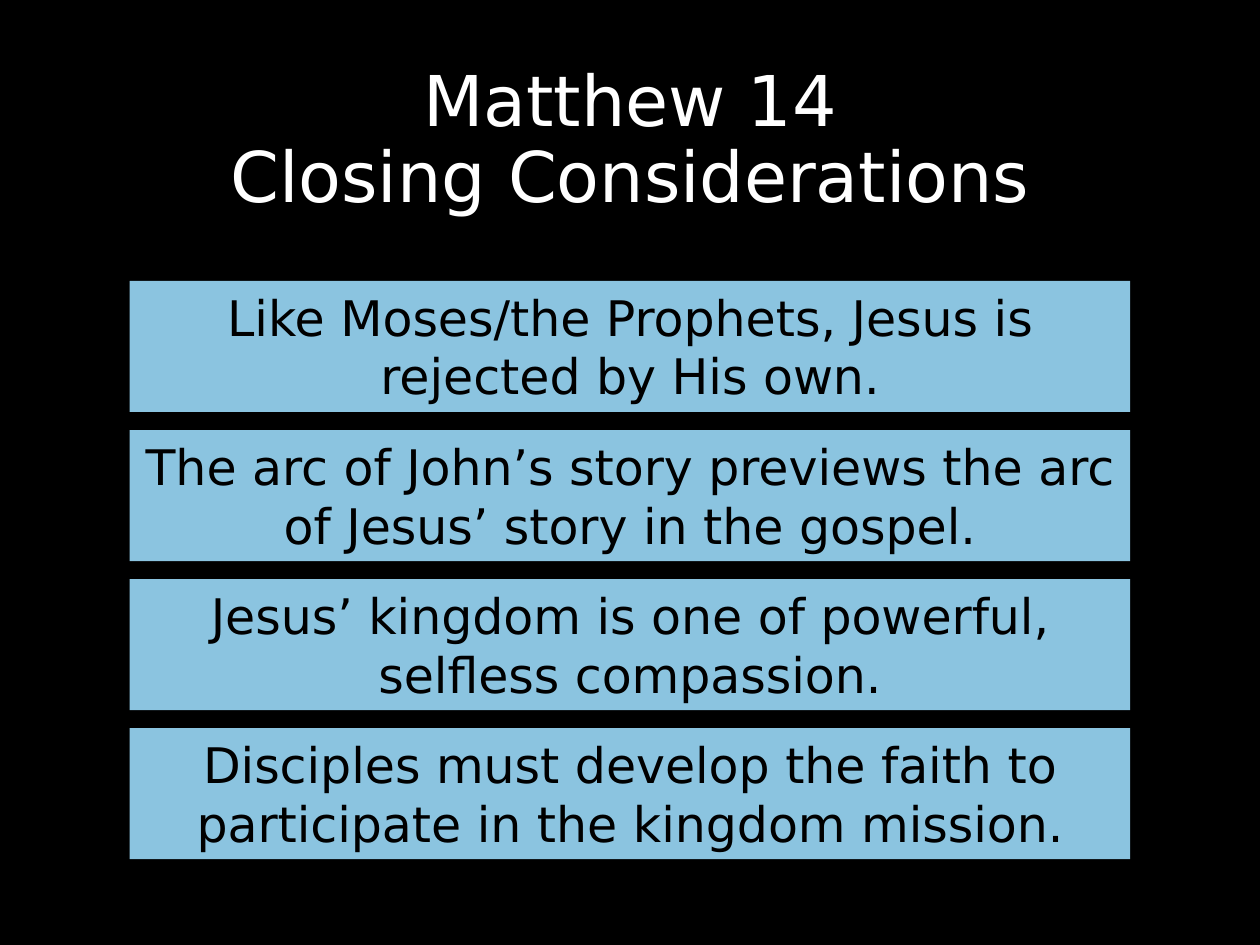
from dataclasses import dataclass

from pptx import Presentation
from pptx.dml.color import RGBColor
from pptx.enum.shapes import MSO_SHAPE
from pptx.enum.text import MSO_ANCHOR, MSO_AUTO_SIZE, PP_ALIGN
from pptx.slide import Slide
from pptx.text.text import TextFrame
from pptx.util import Inches, Pt

COLORS = {"background": "000000", "title": "FFFFFF", "panel": "8BC4E0", "panel_text": "000000"}
FONT = "DejaVu Sans"
FIRST_TOP, LAST_TOP = 2.23, 5.78


@dataclass
class Consideration:
    text: str
    top: float
    left: float = 1.03
    width: float = 7.94
    height: float = 1.04


def write_centered(frame: TextFrame, text: str, size: int, color: str) -> None:
    frame.word_wrap = True
    paragraph = frame.paragraphs[0]
    paragraph.text = text
    paragraph.alignment = PP_ALIGN.CENTER
    for run in paragraph.runs:
        run.font.name = FONT
        run.font.size = Pt(size)
        run.font.color.rgb = RGBColor.from_string(COLORS[color])


def draw_title(slide: Slide, text: str) -> None:
    title = slide.shapes.add_textbox(Inches(0.69), Inches(0.4), Inches(8.62), Inches(1.45))
    frame = title.text_frame
    write_centered(frame, text, 40, "title")
    frame.vertical_anchor = MSO_ANCHOR.MIDDLE
    frame.paragraphs[0].line_spacing = 0.9


def draw_consideration(slide: Slide, item: Consideration) -> None:
    panel = slide.shapes.add_shape(
        MSO_SHAPE.RECTANGLE,
        Inches(item.left), Inches(item.top), Inches(item.width), Inches(item.height),
    )
    panel.shadow.inherit = False
    panel.fill.solid()
    panel.fill.fore_color.rgb = RGBColor.from_string(COLORS["panel"])
    panel.line.fill.background()
    frame = panel.text_frame
    write_centered(frame, item.text, 28, "panel_text")
    frame.vertical_anchor = MSO_ANCHOR.TOP
    frame.auto_size = MSO_AUTO_SIZE.SHAPE_TO_FIT_TEXT


def main() -> None:
    presentation = Presentation()
    presentation.slide_width = Inches(10)
    presentation.slide_height = Inches(7.5)
    slide = presentation.slides.add_slide(presentation.slide_layouts[6])
    slide.background.fill.solid()
    slide.background.fill.fore_color.rgb = RGBColor.from_string(COLORS["background"])

    draw_title(slide, "Matthew 14\nClosing Considerations")
    considerations = [
        "Like Moses/the Prophets, Jesus is rejected by His own.",
        "The arc of John’s story previews the arc of Jesus’ story in the gospel.",
        "Jesus’ kingdom is one of powerful, selfless compassion.",
        "Disciples must develop the faith to participate in the kingdom mission.",
    ]
    pitch = (LAST_TOP - FIRST_TOP) / (len(considerations) - 1)
    for index, text in enumerate(considerations):
        draw_consideration(slide, Consideration(text, FIRST_TOP + index * pitch))

    presentation.save("out.pptx")


if __name__ == "__main__":
    main()
